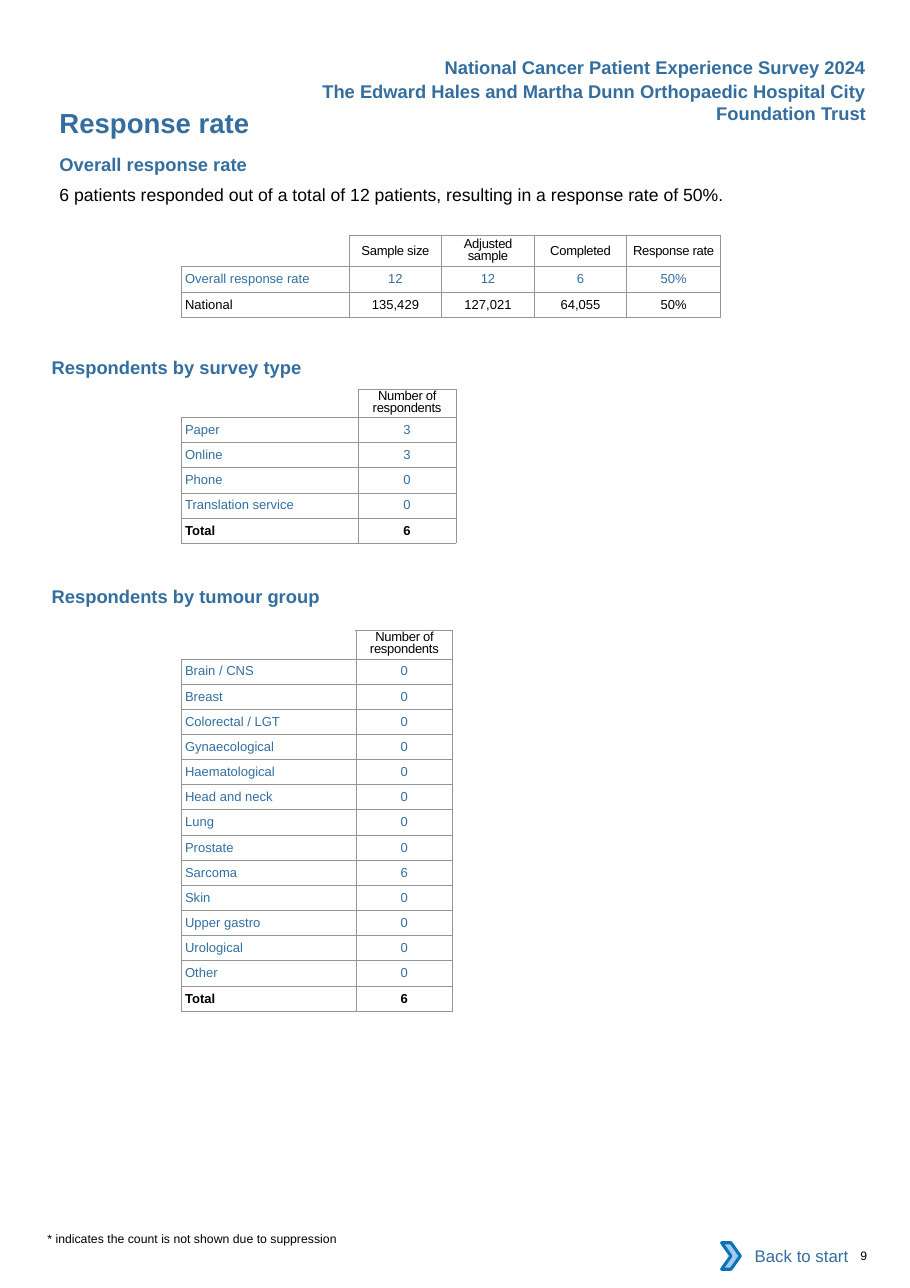
from lxml import etree
from pptx import Presentation
from pptx.dml.color import RGBColor
from pptx.enum.shapes import MSO_SHAPE as Shape
from pptx.enum.text import MSO_ANCHOR as Anchor, PP_ALIGN as Align
from pptx.oxml.ns import qn
from pptx.util import Inches, Pt

COLORS = {"blue": "336E9F", "black": "000000", "rule": "939598",
          "white": "FFFFFF", "chevron": "A8C7E9", "outline": "0A74BB"}
TUMOUR_GROUPS = ["Brain / CNS", "Breast", "Colorectal / LGT", "Gynaecological",
                 "Haematological", "Head and neck", "Lung", "Prostate", "Sarcoma",
                 "Skin", "Upper gastro", "Urological", "Other"]


def color(name):
    return RGBColor.from_string(COLORS[name])


def write(frame, text, size, tint="black", bold=False, align=Align.LEFT, tracking=0):
    para = frame.paragraphs[0]
    para.alignment = align
    para.font.name = "Arial"
    para.font.size = Pt(size)
    para.font.bold = bold
    para.font.color.rgb = color(tint)
    if not text:
        etree.SubElement(para._p, qn("a:endParaRPr"), sz=str(int(size * 100)))
        return para
    span = para.add_run()
    span.text = text
    if tracking:
        span._r.get_or_add_rPr().set("spc", str(int(tracking * 100)))
    return para


def add_text(page, box, text, size, tint="black", bold=False,
             align=Align.LEFT, inset=(0, 0), wrap=True):
    frame = page.shapes.add_textbox(*map(Inches, box)).text_frame
    frame.word_wrap = wrap
    frame.margin_left = frame.margin_right = Inches(inset[0])
    frame.margin_top = frame.margin_bottom = Inches(inset[1])
    write(frame, text, size, tint, bold, align)


def add_borders(cell, drawn):
    properties = cell._tc.get_or_add_tcPr()
    for position, side in enumerate("LRTB"):
        line = etree.Element(qn(f"a:ln{side}"), w=str(Pt(0.5)))
        if side in drawn:
            fill = etree.SubElement(line, qn("a:solidFill"))
            etree.SubElement(fill, qn("a:srgbClr"), val=COLORS["rule"])
        else:
            etree.SubElement(line, qn("a:noFill"))
        properties.insert(position, line)


def fill_cell(cell, text, tint, bold, is_label, is_header):
    wrapped = is_header and text in ("Adjusted sample", "Number of respondents")
    cell.vertical_anchor = Anchor.MIDDLE
    cell.margin_top = cell.margin_bottom = 0
    cell.margin_left = Inches(0.1 if wrapped else 0.03 if is_label else 0)
    cell.margin_right = Inches(0.1 if wrapped else 0)
    para = write(cell.text_frame, text, 8.5, tint, bold,
                 Align.LEFT if is_label else Align.CENTER, -0.2 if is_header else 0)
    if wrapped:
        para.line_spacing = Pt(7.6)


def add_count_table(page, box, widths, header_height, rows, bold_last=False):
    last = len(rows) - 1
    table = page.shapes.add_table(len(rows), len(widths), *map(Inches, box)).table
    table.first_row = table.horz_banding = False
    for column, width in zip(table.columns, widths):
        column.width = Inches(width)
    for row in table.rows:
        row.height = Inches((box[3] - header_height) / last)
    table.rows[0].height = Inches(header_height)
    for i, values in enumerate(rows):
        tint = "black" if i in (0, last) else "blue"
        for j, value in enumerate(values):
            cell = table.cell(i, j)
            cell.fill.background()
            fill_cell(cell, value, tint, bold_last and i == last, j == 0, i == 0)
            add_borders(cell, "RB" if i == j == 0 else "LRTB")


def add_page_header(page, box):
    left, top, width = box
    style = dict(size=12, tint="blue", bold=True, align=Align.RIGHT, inset=(0.1, 0.05))
    add_text(page, (left + 1.7, top, width - 1.7, 0.3),
             "National Cancer Patient Experience Survey 2024", wrap=False, **style)
    add_text(page, (left, top + 0.22, width, 0.5),
             "The Edward Hales and Martha Dunn Orthopaedic Hospital City Foundation Trust",
             **style)


def add_overall(page, box):
    left, top = box
    add_text(page, (left, top, 4.13, 0.3), "Response rate", 18, "blue", True)
    add_text(page, (left, top + 0.43, 4.13, 0.2), "Overall response rate", 12, "blue", True)
    add_text(page, (left, top + 0.71, 7.2, 0.19),
             "6 patients responded out of a total of 12 patients, "
             "resulting in a response rate of 50%.", 11.5)
    rows = [["", "Sample size", "Adjusted sample", "Completed", "Response rate"],
            ["Overall response rate", "12", "12", "6", "50%"],
            ["National", "135,429", "127,021", "64,055", "50%"]]
    add_count_table(page, (left + 1.11, top + 1.18, 4.9, 0.74),
                    [1.52, 0.84, 0.84, 0.84, 0.85], 0.28, rows)


def add_breakdown(page, box, heading, gap, widths, counts):
    left, top, height = box
    add_text(page, (left, top, 2.6, 0.2), heading, 12, "blue", True)
    rows = [["", "Number of respondents"], *counts, ["Total", "6"]]
    add_count_table(page, (left + 1.18, top + gap, sum(widths), height),
                    widths, 0.26, rows, bold_last=True)


def add_block(group, kind, box, fill):
    block = group.shapes.add_shape(kind, *map(Inches, box))
    block.shadow.inherit = False
    block.fill.solid()
    block.fill.fore_color.rgb = color(fill)
    block.line.fill.background()
    return block


def add_footer(page, box):
    left, top = box
    add_text(page, (left, top, 2.65, 0.13),
             "* indicates the count is not shown due to suppression", 8)
    button = page.shapes.add_group_shape()
    label = add_block(button, Shape.RECTANGLE, (left + 6.19, top + 0.01, 1.18, 0.42), "white")
    label.text_frame.vertical_anchor = Anchor.MIDDLE
    write(label.text_frame, "Back to start", 11, "blue", align=Align.RIGHT)
    chevron = add_block(button, Shape.CHEVRON, (left + 6.12, top + 0.1, 0.17, 0.24), "chevron")
    chevron.line.color.rgb = color("outline")
    chevron.line.width = Pt(2)
    add_text(page, (left + 7.38, top + 0.15, 0.4, 0.13), "9", 8)


def main():
    deck = Presentation()
    deck.slide_width, deck.slide_height = Inches(8.26), Inches(11.69)
    page = deck.slides.add_slide(deck.slide_layouts[6])
    add_page_header(page, (2.22, 0.46, 5.74))
    add_overall(page, (0.54, 0.96))
    survey_types = [["Paper", "3"], ["Online", "3"], ["Phone", "0"],
                    ["Translation service", "0"]]
    add_breakdown(page, (0.47, 3.23, 1.4), "Respondents by survey type",
                  0.3, [1.6, 0.89], survey_types)
    tumours = [[name, "6" if name == "Sarcoma" else "0"] for name in TUMOUR_GROUPS]
    add_breakdown(page, (0.47, 5.31, 3.46), "Respondents by tumour group",
                  0.41, [1.58, 0.88], tumours)
    add_footer(page, (0.43, 11.18))
    deck.save("out.pptx")


if __name__ == "__main__":
    main()
